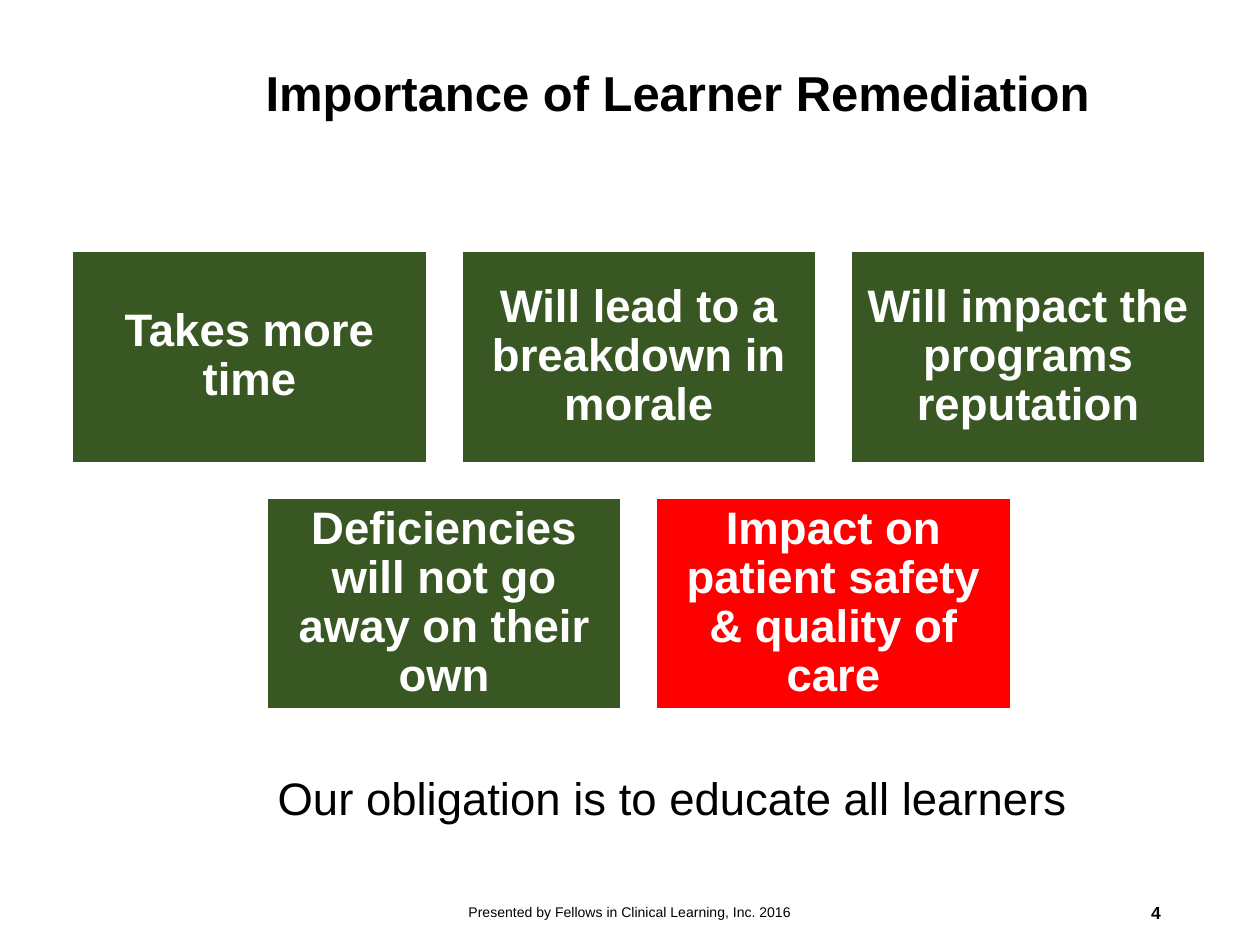
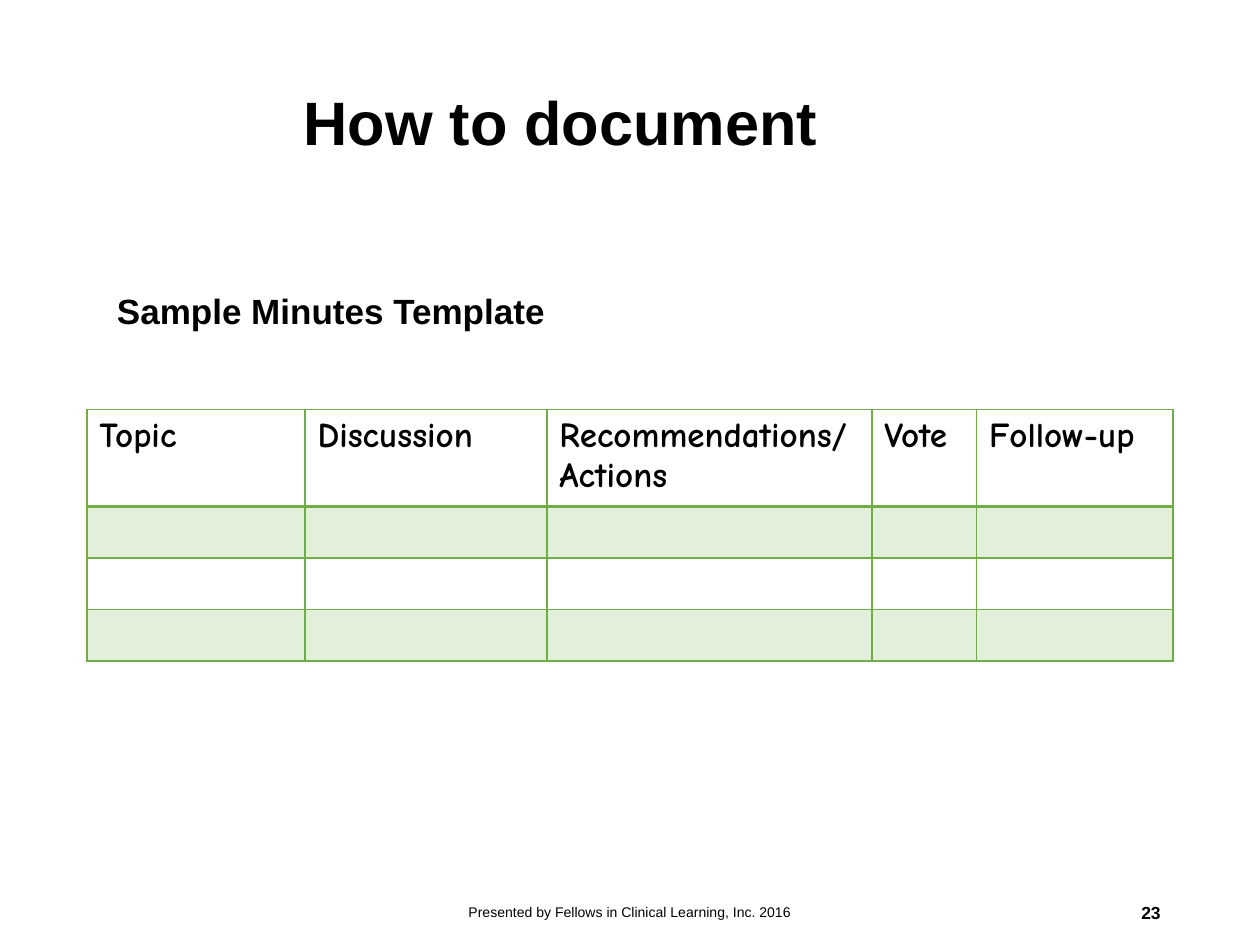
from lxml import etree
from pptx import Presentation, util as u
from pptx.dml.color import RGBColor
from pptx.enum import shapes, text
from pptx.oxml.ns import qn

HUES = {"ink": "000000", "paper": "FFFFFF", "leaf": "385723",
        "alert": "FF0000", "rule": "70AD47", "band": "E2EFDA"}
SANS, HAND = "Arial", "Comic Neue"
LEFT, MID, RIGHT = text.PP_ALIGN.LEFT, text.PP_ALIGN.CENTER, text.PP_ALIGN.RIGHT
WIDE, HIGH = 10, 7.5

FOOT = "Presented by Fellows in Clinical Learning, Inc. 2016"

CARDS = [
    [("Takes more time", "leaf"),
     ("Will lead to a breakdown in morale", "leaf"),
     ("Will impact the programs reputation", "leaf")],
    [("Deficiencies will not go away on their own", "leaf"),
     ("Impact on patient safety & quality of care", "alert")],
]
CARD = {"mid": 5.07, "top": 1.99, "wide": 2.81, "high": 1.68, "gap": 0.28}

COLS = [("Topic", 1.73), ("Discussion", 1.92),
        ("Recommendations/Actions", 2.58), ("Vote", 0.83), ("Follow-up", 1.56)]
ROWS = [0.74, 0.41, 0.41, 0.41]


def rgb(hue):
    return RGBColor.from_string(HUES[hue])


def style(para, size, bold=False, hue="ink", face=SANS):
    font = para.font
    font.size, font.bold, font.name = u.Pt(size), bold, face
    font.color.rgb = rgb(hue)


def write(frame, words, size, align=LEFT, lead=1, middle=True, **look):
    frame.word_wrap = True
    frame.vertical_anchor = (text.MSO_ANCHOR.MIDDLE if middle
                             else text.MSO_ANCHOR.TOP)
    frame.text = words
    para = frame.paragraphs[0]
    para.alignment, para.line_spacing = align, lead
    style(para, size, **look)


def label(slide, box, words, size, **look):
    shape = slide.shapes.add_textbox(*map(u.Inches, box))
    write(shape.text_frame, words, size, **look)


def start(deck, title, box, size, page):
    """Add a slide with its title, footer and page number."""
    slide = deck.slides.add_slide(deck.slide_layouts[6])
    label(slide, box, title, size, bold=True, lead=0.9)
    label(slide, (3.31, 7.04, 3.38, 0.4), FOOT, 8, align=MID)
    label(slide, (7.06, 7.04, 2.25, 0.4), str(page), 10, align=RIGHT, bold=True)
    return slide


def add_cards(slide):
    wide, high, gap = CARD["wide"], CARD["high"], CARD["gap"]
    for r, row in enumerate(CARDS):
        span = len(row) * (wide + gap) - gap
        top = CARD["top"] + r * (high + gap)
        for c, (words, hue) in enumerate(row):
            left = CARD["mid"] - span / 2 + c * (wide + gap)
            card = slide.shapes.add_shape(
                shapes.MSO_SHAPE.RECTANGLE,
                *map(u.Inches, (left, top, wide, high)))
            card.shadow.inherit = False
            card.fill.solid()
            card.fill.fore_color.rgb = rgb(hue)
            card.line.color.rgb = rgb("paper")
            card.line.width = u.Pt(1)
            frame = card.text_frame
            frame.margin_left = frame.margin_right = u.Inches(0.11)
            frame.margin_top = frame.margin_bottom = u.Inches(0.11)
            write(frame, words, 26, align=MID, lead=0.9, bold=True, hue="paper")


def edge(cell, top, base):
    """Rule all four sides of a cell; top and base are widths in points."""
    props = cell._tc.get_or_add_tcPr()
    sides = {"lnL": 1, "lnR": 1, "lnT": top, "lnB": base}
    for i, (side, width) in enumerate(sides.items()):
        line = etree.Element(qn("a:" + side), w=str(u.Pt(width)))
        fill = etree.SubElement(line, qn("a:solidFill"))
        etree.SubElement(fill, qn("a:srgbClr"), val=HUES["rule"])
        props.insert(i, line)


def add_grid(slide):
    span = sum(width for _, width in COLS)
    box = ((WIDE - span) / 2, 3.25, span, sum(ROWS))
    grid = slide.shapes.add_table(
        len(ROWS), len(COLS), *map(u.Inches, box)).table
    for c, (head, width) in enumerate(COLS):
        grid.columns[c].width = u.Inches(width)
        grid.cell(0, c).text = head
    for r, high in enumerate(ROWS):
        grid.rows[r].height = u.Inches(high)
        for c in range(len(COLS)):
            cell = grid.cell(r, c)
            style(cell.text_frame.paragraphs[0], 20 if r == 0 else 18,
                  bold=r == 0, face=HAND)
            edge(cell, 2 if r == 1 else 1, 2 if r == 0 else 1)
            if r % 2:
                cell.fill.solid()
                cell.fill.fore_color.rgb = rgb("band")
            else:
                cell.fill.background()


def main():
    deck = Presentation()
    deck.slide_width, deck.slide_height = u.Inches(WIDE), u.Inches(HIGH)

    slide = start(deck, "Importance of Learner Remediation",
                  (2.01, 0.5, 6.93, 0.52), 28, 4)
    add_cards(slide)
    label(slide, (0.84, 6.11, 9, 0.75),
          "Our obligation is to educate all learners", 26,
          align=MID, lead=0.9, middle=False)

    slide = start(deck, "How to document", (2.31, 0.27, 7.01, 1.45), 35, 23)
    label(slide, (0.83, 2.25, 6.83, 0.44), "Sample Minutes Template", 20,
          bold=True, middle=False)
    add_grid(slide)

    deck.save("out.pptx")


if __name__ == "__main__":
    main()
